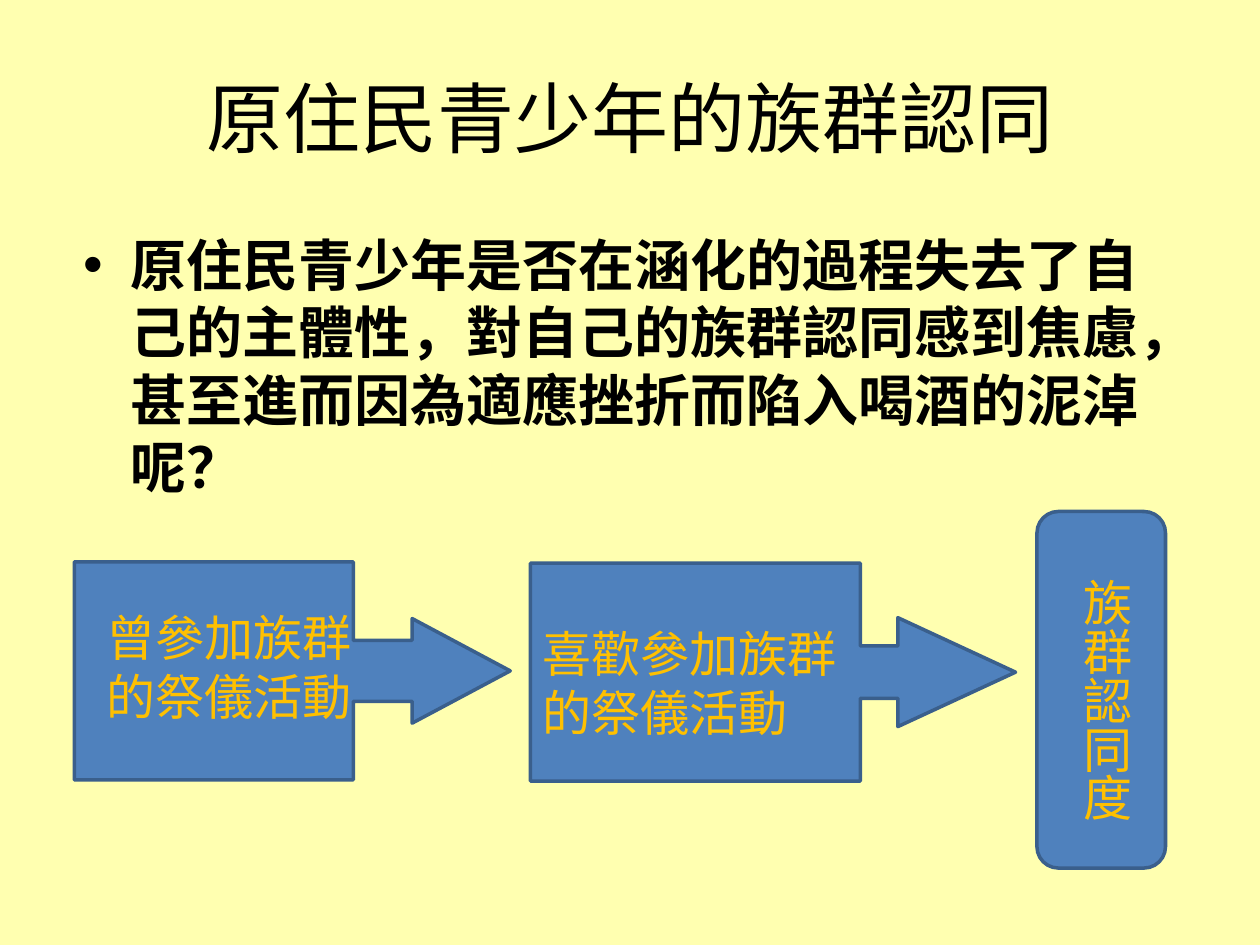
from pptx import Presentation
from pptx.dml.color import RGBColor
from pptx.enum.shapes import MSO_SHAPE
from pptx.enum.text import MSO_ANCHOR, MSO_AUTO_SIZE, PP_ALIGN
from pptx.util import Inches, Pt

CALLOUT = MSO_SHAPE.RIGHT_ARROW_CALLOUT
ROUND = MSO_SHAPE.ROUNDED_RECTANGLE
MIDDLE = MSO_ANCHOR.MIDDLE
GROW, FIXED = MSO_AUTO_SIZE.SHAPE_TO_FIT_TEXT, MSO_AUTO_SIZE.NONE
LEFT, CENTER = PP_ALIGN.LEFT, PP_ALIGN.CENTER

PAPER, INK, BLUE, EDGE, GOLD = "FFFFB0", "000000", "4F81BD", "3A5F8C", "FFC000"


def color(code):
    return RGBColor.from_string(code)


def write(frame, text, size=28, font="Calibri", ink=GOLD, bold=False,
          align=LEFT, fit=FIXED):
    frame.text = text
    frame.word_wrap = True
    frame.auto_size = fit
    for para in frame.paragraphs:
        para.alignment = align
        for run in para.runs:
            run.font.size = Pt(size)
            run.font.name = font
            run.font.bold = bold
            run.font.color.rgb = color(ink)


def place(shape, box):
    shape.left, shape.top, shape.width, shape.height = map(Inches, box)


def add_title(slide, box, text):
    title = slide.shapes.title
    place(title, box)
    write(title.text_frame, text, size=44, ink=INK, align=CENTER)
    title.text_frame.vertical_anchor = MIDDLE


def add_body(slide, box, text):
    body = slide.placeholders[1]
    place(body, box)
    write(body.text_frame, text, size=32, font="Arial", ink=INK, bold=True)


def add_block(slide, kind, box, adjust=()):
    block = slide.shapes.add_shape(kind, *map(Inches, box))
    block.shadow.inherit = False
    block.fill.solid()
    block.fill.fore_color.rgb = color(BLUE)
    block.line.color.rgb = color(EDGE)
    block.line.width = Pt(2)
    for i, value in enumerate(adjust):
        block.adjustments[i] = value


def add_label(slide, box, text, upright=False):
    label = slide.shapes.add_textbox(*map(Inches, box))
    write(label.text_frame, text, fit=GROW)
    if upright:
        label.element.txBody.bodyPr.set("vert", "eaVert")


def add_step(slide, box, adjust, inset, text):
    left, top, _, _ = box
    dx, dy = inset
    add_block(slide, CALLOUT, box, adjust)
    add_label(slide, (left + dx, top + dy, 2.83, 1.04), text)


def add_goal(slide, box, text):
    left, top, _, _ = box
    add_block(slide, ROUND, box)
    add_label(slide, (left + 0.16, top + 0.43, 0.67, 2.25), text, upright=True)


def main():
    deck = Presentation()
    deck.slide_width, deck.slide_height = Inches(10), Inches(7.5)
    slide = deck.slides.add_slide(deck.slide_layouts[1])
    slide.background.fill.solid()
    slide.background.fill.fore_color.rgb = color(PAPER)

    add_title(slide, (0.5, 0.3, 9, 1.25), "原住民青少年的族群認同")
    add_body(slide, (0.56, 1.78, 9, 4.95),
             "原住民青少年是否在涵化的過程失去了自己的主體性，"
             "對自己的族群認同感到焦慮，甚至進而因為適應挫折而陷入喝酒的泥淖呢？")
    add_step(slide, (0.59, 4.46, 3.46, 1.73), (0.28, 0.24, 0.45, 0.64),
             (0.16, 0.31), "曾參加族群\n的祭儀活動")
    add_step(slide, (4.21, 4.47, 3.85, 1.73), (0.24, 0.25, 0.54, 0.68),
             (0, 0.43), "喜歡參加族群\n的祭儀活動")
    add_goal(slide, (8.23, 4.06, 1.02, 2.83), "族群認同度")
    deck.save("out.pptx")


if __name__ == "__main__":
    main()
